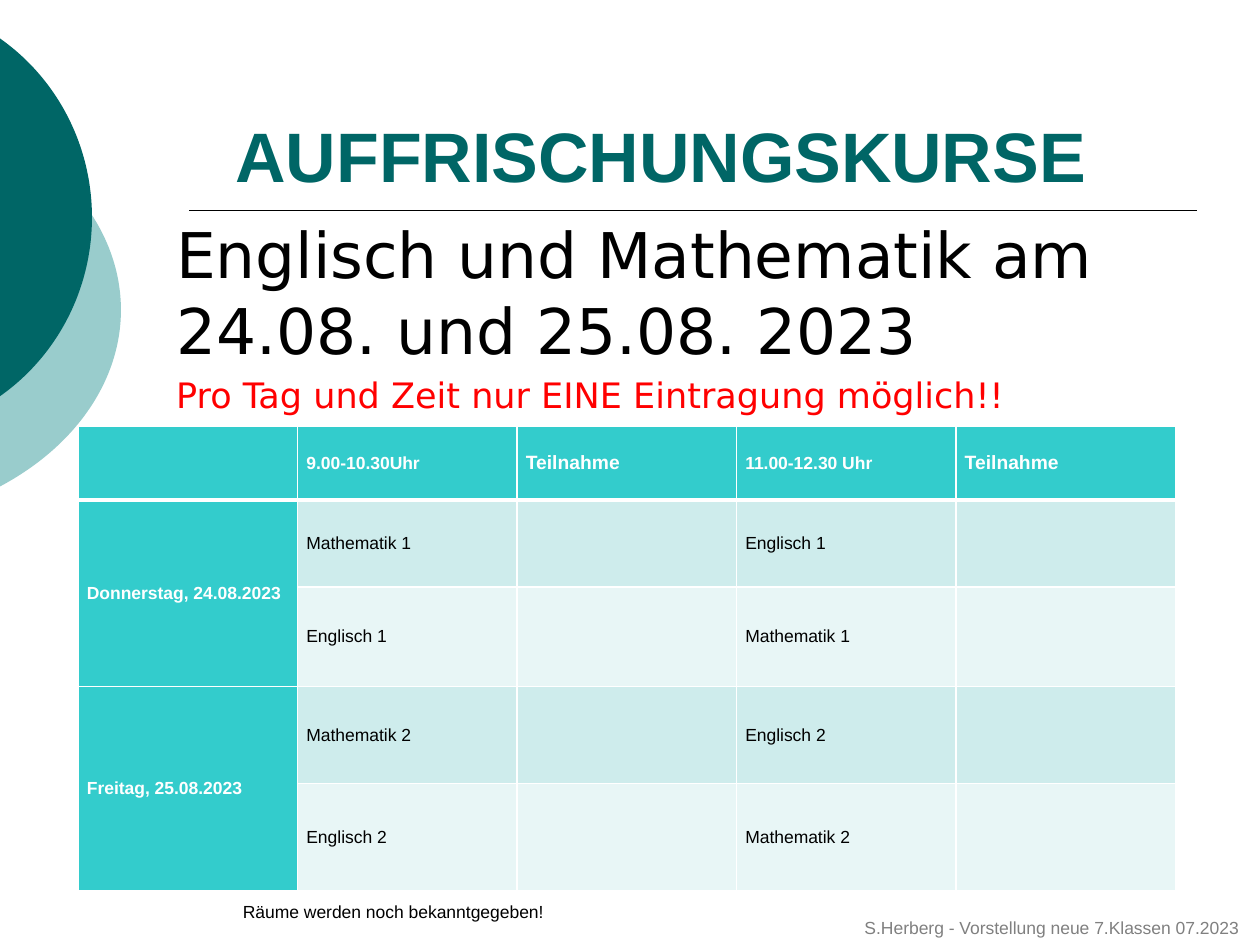
import lxml.etree
import pptx
import pptx.dml.color
import pptx.enum.shapes
import pptx.enum.text
import pptx.oxml.ns
import pptx.util

SLIDE_W, SLIDE_H = 10, 7.5
COLORS = {
    "teal": "006666", "mist": "99CCCC", "header": "33CCCC",
    "band_dark": "CEECEC", "band_light": "E8F6F6",
    "black": "000000", "white": "FFFFFF", "red": "FF0000", "grey": "808080",
}
ANCHOR = pptx.enum.text.MSO_ANCHOR
ALIGN = pptx.enum.text.PP_ALIGN

# Timetable: five equal columns, a header and two rows per day
TIMETABLE_W = 8.71
ROW_HEIGHTS = [0.59, 0.69, 0.79, 0.77, 0.85]
TIMETABLE = [
    ["", "9.00-10.30Uhr", "Teilnahme", "11.00-12.30 Uhr", "Teilnahme"],
    ["Donnerstag, 24.08.2023", "Mathematik 1", "", "Englisch 1", ""],
    ["", "Englisch 1", "", "Mathematik 1", ""],
    ["Freitag, 25.08.2023", "Mathematik 2", "", "Englisch 2", ""],
    ["", "Englisch 2", "", "Mathematik 2", ""],
]


def rgb(name):
    return pptx.dml.color.RGBColor.from_string(COLORS[name])


def inches(*lengths):
    return [pptx.util.Inches(length) for length in lengths]


def write(paragraph, text, size=10, font="Arial", color="black", bold=False,
          align=ALIGN.LEFT, before=0):
    paragraph.alignment = align
    paragraph.space_before = pptx.util.Pt(before)
    run = paragraph.add_run()
    run.text = text
    run.font.size = pptx.util.Pt(size)
    run.font.name = font
    run.font.bold = bold
    run.font.color.rgb = rgb(color)


def add_text(slide, box, *lines, anchor=ANCHOR.TOP):
    """Add a text box; each line is a (text, format) pair."""
    frame = slide.shapes.add_textbox(*inches(*box)).text_frame
    frame.word_wrap = True
    frame.vertical_anchor = anchor
    for number, (text, style) in enumerate(lines):
        paragraph = frame.add_paragraph() if number else frame.paragraphs[0]
        write(paragraph, text, **style)


def add_disc(slide, box, color):
    disc = slide.shapes.add_shape(
        pptx.enum.shapes.MSO_SHAPE.OVAL, *inches(*box))
    disc.shadow.inherit = False
    disc.fill.solid()
    disc.fill.fore_color.rgb = rgb(color)
    disc.line.fill.background()


def add_rule(slide, left, right, y):
    rule = slide.shapes.add_connector(
        pptx.enum.shapes.MSO_CONNECTOR.STRAIGHT, *inches(left, y, right, y))
    rule.line.color.rgb = rgb("black")
    rule.line.width = pptx.util.Pt(1)
    lxml.etree.SubElement(rule._element.spPr, pptx.oxml.ns.qn("a:effectLst"))


def set_borders(cell, **widths):
    """Give the cell white borders, with widths in points by side."""
    qn = pptx.oxml.ns.qn
    properties = cell._tc.get_or_add_tcPr()
    for side in "LRTB":
        width = pptx.util.Pt(widths.get(side, 1))
        line = lxml.etree.SubElement(properties, qn("a:ln" + side), w=str(width))
        fill = lxml.etree.SubElement(line, qn("a:solidFill"))
        lxml.etree.SubElement(fill, qn("a:srgbClr"), val=COLORS["white"])


def format_cell(cell, text, row, column):
    heading = row == 0 or column == 0
    set_borders(cell, T=3 if row == 1 else 1, B=3 if row == 0 else 1)
    cell.fill.solid()
    band = "band_dark" if row % 2 else "band_light"
    cell.fill.fore_color.rgb = rgb("header" if heading else band)
    cell.vertical_anchor = ANCHOR.MIDDLE
    cell.margin_left = cell.margin_right = pptx.util.Inches(0.07)
    cell.margin_top = cell.margin_bottom = 0
    if text:
        write(cell.text_frame.paragraphs[0], text, bold=heading,
              size=11 if text == "Teilnahme" else 10,
              color="white" if heading else "black")


def add_timetable(slide, left, top):
    rows, columns = len(TIMETABLE), len(TIMETABLE[0])
    table = slide.shapes.add_table(rows, columns, *inches(
        left, top, TIMETABLE_W, sum(ROW_HEIGHTS))).table
    for column in table.columns:
        column.width = pptx.util.Inches(TIMETABLE_W / columns)
    for row, height in zip(table.rows, ROW_HEIGHTS):
        row.height = pptx.util.Inches(height)
    for day in range(1, rows, 2):
        table.cell(day, 0).merge(table.cell(day + 1, 0))
    for row, texts in enumerate(TIMETABLE):
        for column, text in enumerate(texts):
            format_cell(table.cell(row, column), text, row, column)


def main():
    deck = pptx.Presentation()
    deck.slide_width, deck.slide_height = inches(SLIDE_W, SLIDE_H)
    slide = deck.slides.add_slide(deck.slide_layouts[6])

    # Discs bleeding off the left edge and the rule under the title
    add_disc(slide, (-3.54, 0.75, 4.5, 3.42), "mist")
    add_disc(slide, (-2.65, 0, 3.38, 3.45), "teal")
    add_rule(slide, 0.15 * SLIDE_W, 0.95 * SLIDE_W, 1.67)

    # Title and announcement
    add_text(slide, (1.77, 0.84, 0.85 * SLIDE_W, 1.1),
             ("AUFFRISCHUNGSKURSE", dict(size=40, color="teal", bold=True)))
    add_text(slide, (1.3, 1.71, 0.85 * SLIDE_W, 1.64),
             ("Englisch und Mathematik am 24.08. und 25.08. 2023",
              dict(size=36, font="DejaVu Sans", before=7)),
             ("Pro Tag und Zeit nur EINE Eintragung möglich!!",
              dict(size=20, font="DejaVu Sans", color="red", before=4)),
             anchor=ANCHOR.BOTTOM)

    # Footer, timetable and room note
    add_text(slide, (6.02, 7.23, 4.65, 0.27),
             ("S.Herberg - Vorstellung neue 7.Klassen 07.2023",
              dict(color="grey", align=ALIGN.CENTER)))
    add_timetable(slide, 0.62, 3.38)
    add_text(slide, (1.62, 7.1, 3, 0.27),
             ("Räume werden noch bekanntgegeben!", dict(align=ALIGN.CENTER)))

    deck.save("out.pptx")


if __name__ == "__main__":
    main()
